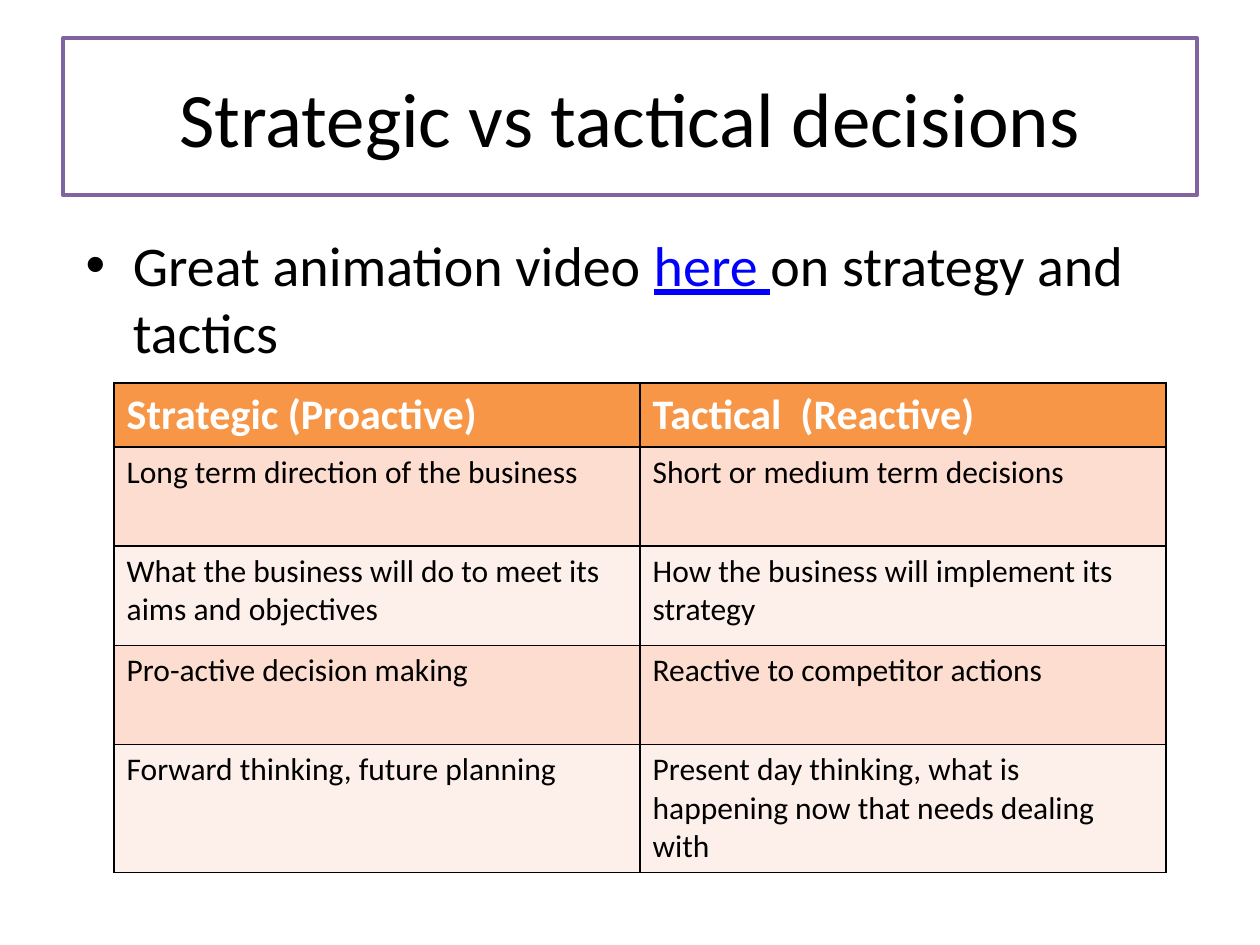
from lxml import etree
from pptx import Presentation
from pptx import util as u
from pptx.dml.color import RGBColor
from pptx.enum import shapes, text
from pptx.oxml import ns

Pt = u.Pt
BLACK = RGBColor(0, 0, 0)
WHITE = RGBColor(255, 255, 255)
PURPLE = RGBColor(0x80, 0x64, 0xA2)
BLUE = RGBColor(0, 0, 255)
ORANGE = RGBColor(0xF7, 0x96, 0x46)
BANDS = [RGBColor(0xFC, 0xDD, 0xCF), RGBColor(0xFD, 0xEF, 0xE9)]

TITLE = "Strategic vs tactical decisions"
BODY = [
    ("Great animation video ", {}),
    ("here ", {"color": BLUE, "underline": True}),
    ("on strategy and tactics", {}),
]
DECISIONS = [
    ("Strategic (Proactive)", "Tactical  (Reactive)"),
    ("Long term direction of the business", "Short or medium term decisions"),
    ("What the business will do to meet its aims and objectives",
     "How the business will implement its strategy"),
    ("Pro-active decision making", "Reactive to competitor actions"),
    ("Forward thinking, future planning",
     "Present day thinking, what is happening now that needs dealing with"),
]
ROW_HEIGHTS = [36.5, 56.7, 56.7, 56.7, 73]
COLUMN_WIDTH = 300.6
HEADER = {"size": Pt(24), "bold": True, "color": WHITE}
ENTRY = {"size": Pt(18), "bold": False}


def add_span(para, words, **formats):
    span = para.add_run()
    span.text = words
    formats = {"name": "Calibri", "color": BLACK, **formats}
    span.font.color.rgb = formats.pop("color")
    for name, value in formats.items():
        setattr(span.font, name, value)


def add_borders(cell):
    properties = cell._tc.get_or_add_tcPr()
    for position, side in enumerate(("lnL", "lnR", "lnT", "lnB")):
        line = etree.Element(ns.qn("a:" + side), w=str(Pt(1)))
        fill = etree.SubElement(line, ns.qn("a:solidFill"))
        etree.SubElement(fill, ns.qn("a:srgbClr"), val=str(BLACK))
        properties.insert(position, line)


deck = Presentation()
deck.slide_width, deck.slide_height = Pt(720), Pt(540)
page = deck.slides.add_slide(deck.slide_layouts[6])

title = page.shapes.add_shape(
    shapes.MSO_SHAPE.RECTANGLE, Pt(36), Pt(21.6), Pt(648), Pt(90))
title.shadow.inherit = False
title.fill.solid()
title.fill.fore_color.rgb = WHITE
title.line.color.rgb = PURPLE
title.line.width = Pt(2)
title.text_frame.vertical_anchor = text.MSO_ANCHOR.MIDDLE
para = title.text_frame.paragraphs[0]
para.alignment = text.PP_ALIGN.CENTER
add_span(para, TITLE, size=Pt(44))

body = page.shapes.add_textbox(Pt(41.8), Pt(128.2), Pt(648), Pt(92.9))
body.text_frame.word_wrap = True
para = body.text_frame.paragraphs[0]
properties = para._p.get_or_add_pPr()
for name, value in {"marL": Pt(27), "indent": -Pt(27)}.items():
    properties.set(name, str(value))
etree.SubElement(properties, ns.qn("a:buFont"), typeface="Arial")
etree.SubElement(properties, ns.qn("a:buChar"), char="•")
for words, formats in BODY:
    add_span(para, words, size=Pt(32), **formats)

columns = len(DECISIONS[0])
table = page.shapes.add_table(
    len(DECISIONS), columns, Pt(65.2), Pt(218.9),
    Pt(columns * COLUMN_WIDTH), Pt(sum(ROW_HEIGHTS))).table
for column in table.columns:
    column.width = Pt(COLUMN_WIDTH)
for index, (entries, height) in enumerate(zip(DECISIONS, ROW_HEIGHTS)):
    table.rows[index].height = Pt(height)
    for cell, words in zip(table.rows[index].cells, entries):
        cell.fill.solid()
        cell.fill.fore_color.rgb = BANDS[(index - 1) % 2] if index else ORANGE
        add_borders(cell)
        add_span(cell.text_frame.paragraphs[0], words,
                 **(ENTRY if index else HEADER))

deck.save("out.pptx")
